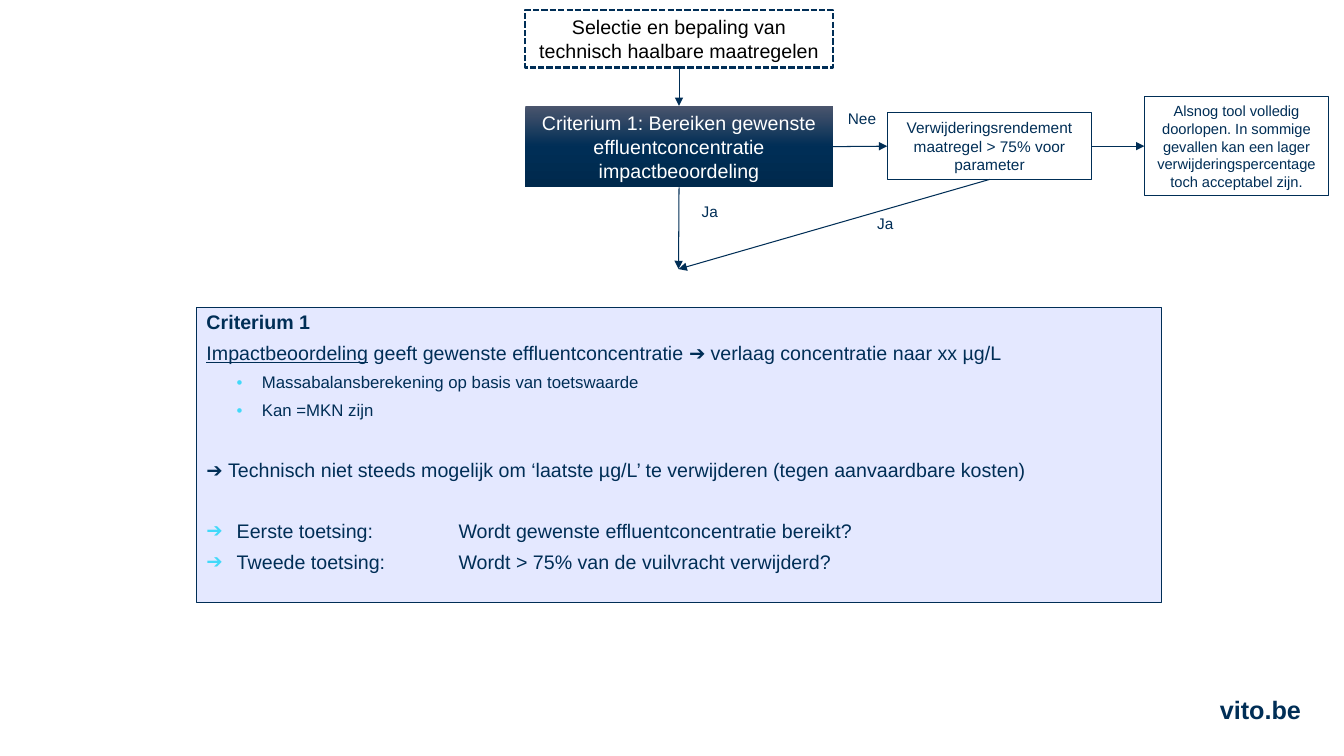
"""Builds the decision flow slide for criterion 1."""
from dataclasses import dataclass

from lxml import etree
from pptx import Presentation
from pptx.dml.color import RGBColor
from pptx.enum.dml import MSO_LINE
from pptx.enum.shapes import MSO_CONNECTOR, MSO_SHAPE
from pptx.enum.text import MSO_ANCHOR, PP_ALIGN
from pptx.oxml.ns import qn
from pptx.util import Emu, Pt

PX = 9144
BLANK_LAYOUT = 6
RECTANGLE = MSO_SHAPE.RECTANGLE
STRAIGHT = MSO_CONNECTOR.STRAIGHT
DASHED = MSO_LINE.SQUARE_DOT
MIDDLE, TOP = MSO_ANCHOR.MIDDLE, MSO_ANCHOR.TOP
CENTER, LEFT = PP_ALIGN.CENTER, PP_ALIGN.LEFT
TOP_SITE, LEFT_SITE, BOTTOM_SITE, RIGHT_SITE = range(4)


@dataclass(frozen=True)
class Theme:
    """Colours, font and type sizes of the slide."""
    font: str = "Arial"
    navy: str = "002E56"
    black: str = "000000"
    white: str = "FFFFFF"
    panel: str = "E4E8FF"
    bullet: str = "41D9F9"
    gradient: tuple = ((0, "4B556D"), (50, "002E56"), (100, "00294C"))
    footer_size: float = 18
    main_size: float = 14
    sub_size: float = 12
    label_size: float = 11
    note_size: float = 10.5
    thin: float = 0.75
    panel_line: float = 1
    thick: float = 1.5


THEME = Theme()


def px(*lengths):
    """Turn pixel lengths into EMU."""
    return [Emu(length * PX) for length in lengths]


def format_runs(paragraph, size, color=THEME.navy, bold=False):
    """Give every run of a paragraph its type."""
    for run in paragraph.runs:
        run.font.name = THEME.font
        run.font.size = Pt(size)
        run.font.bold = bold
        run.font.color.rgb = RGBColor.from_string(color)


def write(shape, text, size, color=THEME.navy, align=CENTER, bold=False):
    """Put one formatted paragraph in a shape."""
    frame = shape.text_frame
    frame.word_wrap = True
    frame.vertical_anchor = MIDDLE
    frame.text = text
    paragraph = frame.paragraphs[0]
    paragraph.alignment = align
    format_runs(paragraph, size, color, bold)


def add_label(slide, place, text, size=THEME.label_size, align=CENTER, bold=False):
    """Add a text without a frame."""
    write(slide.shapes.add_textbox(*px(*place)), text, size, align=align, bold=bold)


def add_box(slide, place, fill=None, line_width=THEME.thin):
    """Add a rectangle with a navy outline."""
    shape = slide.shapes.add_shape(RECTANGLE, *px(*place))
    shape.shadow.inherit = False
    if fill:
        shape.fill.solid()
        shape.fill.fore_color.rgb = RGBColor.from_string(fill)
    else:
        shape.fill.background()
    shape.line.color.rgb = RGBColor.from_string(THEME.navy)
    shape.line.width = Pt(line_width)
    return shape


def add_gradient(shape):
    """Replace fill and outline by the vertical theme gradient."""
    shape.line.fill.background()
    shape.fill.gradient()
    shape.fill.gradient_angle = 270
    stops = shape.element.spPr.find(qn("a:gradFill")).find(qn("a:gsLst"))
    for stop in list(stops):
        stops.remove(stop)
    for position, color in THEME.gradient:
        stop = etree.SubElement(stops, qn("a:gs"), pos=str(position * 1000))
        etree.SubElement(stop, qn("a:srgbClr"), val=color)


def add_arrow(slide, start, start_site, end, end_site=None):
    """Add an arrow from a box to another box or to a point."""
    target = (0, 0) if end_site is not None else end
    connector = slide.shapes.add_connector(STRAIGHT, *px(*target, *target))
    connector.begin_connect(start, start_site)
    if end_site is not None:
        connector.end_connect(end, end_site)
    connector.line.color.rgb = RGBColor.from_string(THEME.navy)
    connector.line.width = Pt(THEME.thin)
    outline = connector.line._get_or_add_ln()
    etree.SubElement(outline, qn("a:tailEnd"), type="triangle")
    etree.SubElement(connector.element.spPr, qn("a:effectLst"))


def add_bullet(paragraph, sign, margin, hanging):
    """Give a paragraph a coloured bullet and a hanging indent."""
    properties = paragraph._p.get_or_add_pPr()
    properties.set("marL", str(margin * PX))
    properties.set("indent", str(-hanging * PX))
    color = etree.SubElement(properties, qn("a:buClr"))
    etree.SubElement(color, qn("a:srgbClr"), val=THEME.bullet)
    etree.SubElement(properties, qn("a:buFont"), typeface=THEME.font)
    etree.SubElement(properties, qn("a:buChar"), char=sign)


def add_line(frame, text, size=THEME.main_size, before=7, bullet=None):
    """Append a left-aligned paragraph to the explanation."""
    paragraph = frame.add_paragraph() if frame.text else frame.paragraphs[0]
    paragraph.text = text
    paragraph.alignment = LEFT
    paragraph.line_spacing = 0.9
    paragraph.space_before = Pt(before)
    if bullet:
        add_bullet(paragraph, *bullet)
    format_runs(paragraph, size)
    return paragraph


def add_explanation(slide):
    """Add the panel that explains the criterion."""
    frame = add_box(slide, (195, 305, 957, 293), THEME.panel, THEME.panel_line).text_frame
    frame.word_wrap = True
    frame.vertical_anchor = TOP
    dot, arrow = ("•", 55, 25), ("➔", 30, 30)
    section_gap = 28.5

    heading = add_line(frame, "Criterium 1", before=0)
    heading.runs[0].font.bold = True
    impact = add_line(frame, "Impactbeoordeling")
    impact.runs[0].font.underline = True
    impact.add_run().text = (
        " geeft gewenste effluentconcentratie ➔ verlaag concentratie naar xx µg/L")
    format_runs(impact, THEME.main_size)
    for text in ("Massabalansberekening op basis van toetswaarde", "Kan =MKN zijn"):
        add_line(frame, text, THEME.sub_size, bullet=dot)
    add_line(frame, "➔ Technisch niet steeds mogelijk om ‘laatste µg/L’ te verwijderen "
             "(tegen aanvaardbare kosten)", before=section_gap)
    add_line(frame, "Eerste toetsing: \t\tWordt gewenste effluentconcentratie bereikt?",
             before=section_gap, bullet=arrow)
    add_line(frame, "Tweede toetsing: \t\tWordt > 75% van de vuilvracht verwijderd?",
             bullet=arrow)


def add_flow(slide):
    """Add the decision flow above the explanation."""
    selection = add_box(slide, (521, 10, 305, 57), THEME.white, THEME.thick)
    selection.line.dash_style = DASHED
    write(selection, "Selectie en bepaling van technisch haalbare maatregelen",
          THEME.main_size, THEME.black)
    criterion = add_box(slide, (521, 105, 305, 81))
    add_gradient(criterion)
    write(criterion, "Criterium 1: Bereiken gewenste effluentconcentratie "
          "impactbeoordeling", THEME.main_size, THEME.white)
    removal = add_box(slide, (880, 112, 203, 66))
    write(removal, "Verwijderingsrendement maatregel > 75% voor parameter",
          THEME.label_size)
    exception = add_box(slide, (1135, 96, 183, 98))
    write(exception, "Alsnog tool volledig doorlopen. In sommige gevallen kan een lager "
          "verwijderingspercentage toch acceptabel zijn.", THEME.note_size)

    merge_point = (673, 267)
    add_arrow(slide, selection, BOTTOM_SITE, criterion, TOP_SITE)
    add_arrow(slide, criterion, RIGHT_SITE, removal, LEFT_SITE)
    add_arrow(slide, removal, RIGHT_SITE, exception, LEFT_SITE)
    add_arrow(slide, criterion, BOTTOM_SITE, merge_point)
    add_arrow(slide, removal, BOTTOM_SITE, merge_point)
    for left, top, text in ((722, 103, "Nee"), (571, 195, "Ja"), (745, 207, "Ja")):
        add_label(slide, (left, top, 266, 29), text)


def main():
    """Build and save the presentation."""
    presentation = Presentation()
    presentation.slide_width, presentation.slide_height = px(1333, 750)
    slide = presentation.slides.add_slide(presentation.slide_layouts[BLANK_LAYOUT])
    add_label(slide, (1200, 684, 156, 40), "vito.be", THEME.footer_size, LEFT, True)
    add_explanation(slide)
    add_flow(slide)
    presentation.save("out.pptx")


if __name__ == "__main__":
    main()
